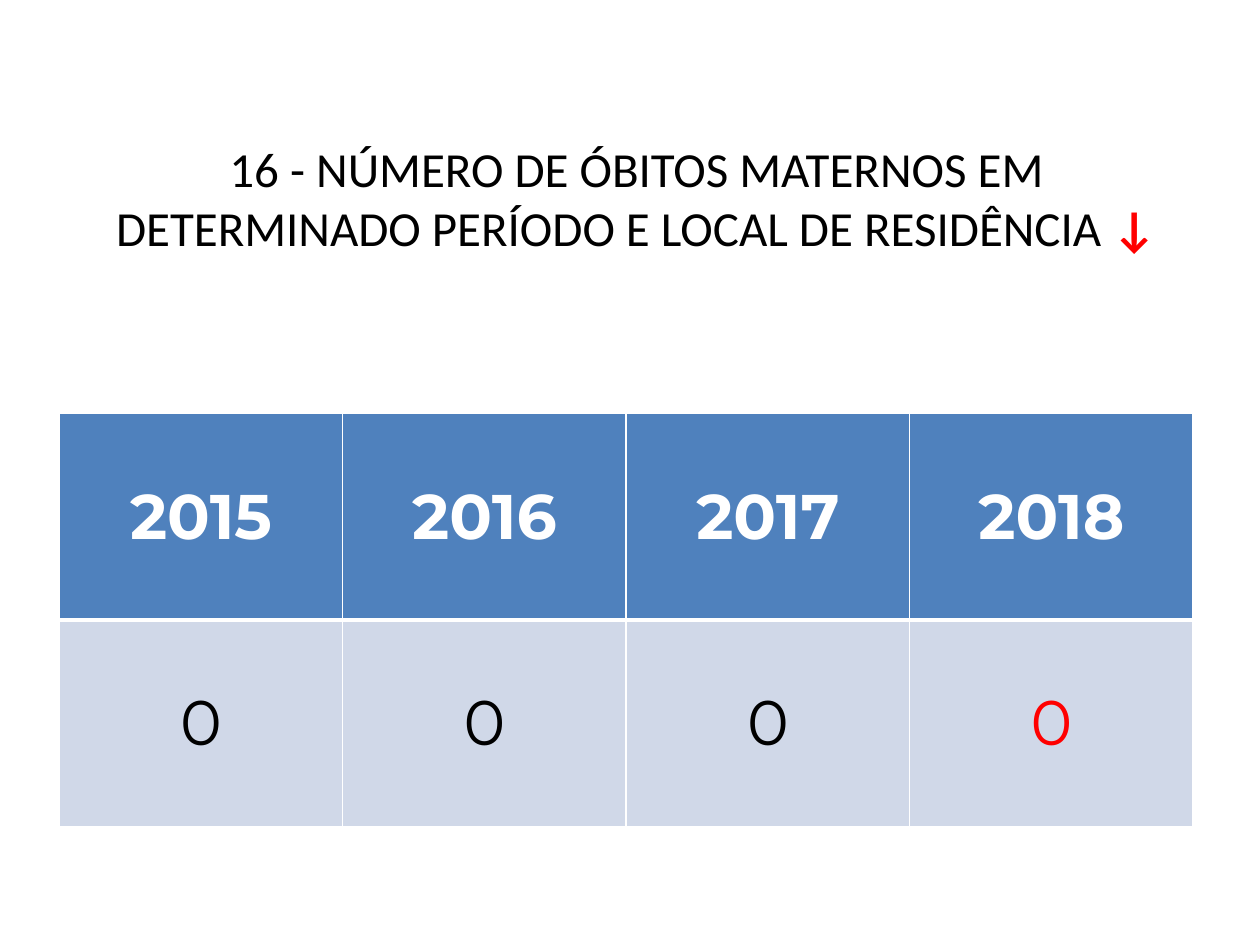
from lxml.etree import SubElement
from pptx import Presentation
from pptx.dml.color import RGBColor
from pptx.enum.text import MSO_ANCHOR, PP_ALIGN
from pptx.oxml.ns import qn
from pptx.util import Pt

# Content
TITLE = "16 - NÚMERO DE ÓBITOS MATERNOS EM DETERMINADO PERÍODO E LOCAL DE RESIDÊNCIA "
TREND = "↓"
DEATHS = [("2015", "0"), ("2016", "0"), ("2017", "0"), ("2018", "0")]

COLORS = {"text": "000000", "accent": "FF0000", "white": "FFFFFF",
          "header": "4F81BD", "body": "D0D8E8"}
TITLE_BOX = (39.6, 11.5, 648, 202.3)
TABLE_LEFT, TABLE_TOP, COLUMN_WIDTH, ROW_HEIGHT = 33.84, 236.16, 162, 118.08


def add_text(para, text, size=36, font="Montserrat", color="text", bold=False):
    para.alignment = PP_ALIGN.CENTER
    span = para.add_run()
    span.text = text
    span.font.size = Pt(size)
    span.font.name = font
    span.font.bold = bold
    span.font.color.rgb = RGBColor.from_string(COLORS[color])


def add_borders(cell, widths):
    properties = cell._tc.get_or_add_tcPr()
    for side, width in widths.items():
        line = SubElement(properties, qn(f"a:ln{side}"), w=str(Pt(width)))
        fill = SubElement(line, qn("a:solidFill"))
        SubElement(fill, qn("a:srgbClr"), val=COLORS["white"])


deck = Presentation()
deck.slide_width, deck.slide_height = Pt(720), Pt(540)
page = deck.slides.add_slide(deck.slide_layouts[6])

# Title with trend arrow
box = page.shapes.add_textbox(*map(Pt, TITLE_BOX))
frame = box.text_frame
frame.word_wrap = True
frame.vertical_anchor = MSO_ANCHOR.MIDDLE
para = frame.paragraphs[0]
add_text(para, TITLE, size=28, font="Calibri")
add_text(para, TREND, size=28, font="Calibri", color="accent", bold=True)

# Table: years above, deaths below, latest year highlighted
table = page.shapes.add_table(
    2, len(DEATHS), Pt(TABLE_LEFT), Pt(TABLE_TOP),
    Pt(COLUMN_WIDTH * len(DEATHS)), Pt(ROW_HEIGHT * 2)).table
for column, values in enumerate(DEATHS):
    latest = column == len(DEATHS) - 1
    for row, value in enumerate(values):
        header = row == 0
        cell = table.cell(row, column)
        cell.vertical_anchor = MSO_ANCHOR.MIDDLE
        # Borders go before the fill in the cell's XML
        add_borders(cell, {"L": 1, "R": 1, "T": 1 if header else 3,
                           "B": 3 if header else 1})
        cell.fill.solid()
        cell.fill.fore_color.rgb = RGBColor.from_string(
            COLORS["header" if header else "body"])
        color = "white" if header else "accent" if latest else "text"
        add_text(cell.text_frame.paragraphs[0], value, color=color, bold=header)

deck.save("out.pptx")
